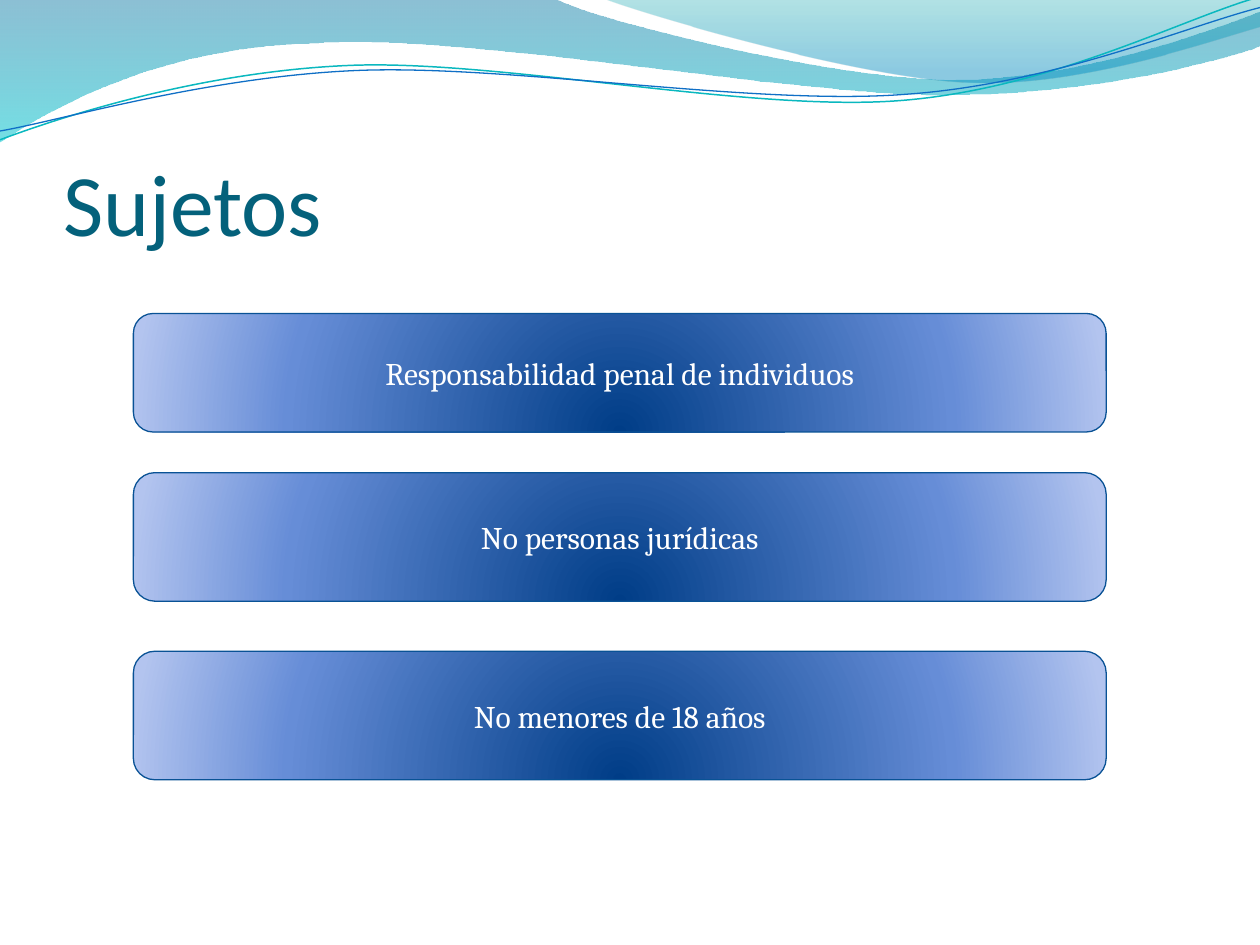
"""Build the "Sujetos" slide: wave header, title and three gradient cards."""
from dataclasses import dataclass
from typing import Optional

from lxml import etree
from pptx import Presentation
from pptx import util as u
from pptx.dml.color import RGBColor
from pptx.enum import shapes, text
from pptx.oxml.ns import qn

WHITE = RGBColor(0xFF, 0xFF, 0xFF)
TITLE = RGBColor(0x04, 0x61, 0x7B)
BORDER = RGBColor(0x09, 0x52, 0x95)
TEAL = RGBColor(0x0A, 0xB8, 0xBF)
BLUE = RGBColor(0x0F, 0x6F, 0xC6)
DEEP_BLUE = RGBColor(0x00, 0x74, 0xA1)
AQUA = RGBColor(0x00, 0xC6, 0xCF)
SEA = RGBColor(0x00, 0xA1, 0xA9)
SKY = RGBColor(0x00, 0x8B, 0xBF)
NAVY = RGBColor(0x00, 0x3D, 0x87)
MID_BLUE = RGBColor(0x66, 0x8D, 0xD7)
PALE_BLUE = RGBColor(0xB3, 0xC4, 0xEF)

UNIT = 2.54
CARD_LEFT, CARD_WIDTH = u.Cm(2.69), u.Cm(19.61)
CARD_STOPS = ((0, NAVY, 100), (68, MID_BLUE, 100), (100, PALE_BLUE, 100))


@dataclass
class Wave:
    start: tuple
    segments: tuple
    stops: tuple = ()
    color: Optional[RGBColor] = None
    width: float = 0


@dataclass
class Card:
    label: str
    top: float
    height: float


WAVES = (
    Wave((0, 0), (
        ((4.4, -0.01),),
        ((4.76, 0.17), (6.64, 0.63), (7.58, 0.63)),
        ((8.53, 0.63), (9.58, 0.26), (10, 0.09)),
        ((10.01, 0.36),),
        ((9.83, 0.44), (8.7, 0.76), (7.46, 0.75)),
        ((6.22, 0.75), (3.82, 0.28), (2.57, 0.34)),
        ((1.29, 0.36), (0.46, 0.83), (-0.01, 1.13)),
        ((0, 0),),
    ), stops=((0, DEEP_BLUE, 45), (100, AQUA, 55))),
    Wave((4.79, -0.01), (
        ((5.09, 0.11), (6.82, 0.62), (7.69, 0.65)),
        ((8.56, 0.69), (9.61, 0.32), (10, 0.21)),
        ((10, 0),),
        ((4.79, -0.01),),
    ), stops=((0, SEA, 30), (80, SKY, 45))),
    Wave((0, 1.11), (
        ((0.48, 0.93), (1.58, 0.57), (2.77, 0.52)),
        ((3.95, 0.47), (5.93, 0.89), (7.13, 0.8)),
        ((8.33, 0.71), (9.38, 0.15), (9.98, -0.02)),
    ), color=TEAL, width=0.85),
    Wave((0, 1.04), (
        ((0.47, 0.96), (1.64, 0.61), (2.83, 0.56)),
        ((4.03, 0.51), (5.97, 0.84), (7.17, 0.75)),
        ((8.36, 0.67), (9.41, 0.21), (10, 0.06)),
    ), color=BLUE, width=0.75),
)
CARDS = (
    Card("Responsabilidad penal de individuos", 6.32, 2.39),
    Card("No personas jurídicas", 9.53, 2.59),
    Card("No menores de 18 años", 13.13, 2.59),
)


def set_attrs(target, values: dict) -> None:
    for name, value in values.items():
        setattr(target, name, value)


def set_gradient(sp, stops: tuple, radial: bool = False) -> None:
    sp.fill.solid()
    solid = sp.element.spPr.find(qn("a:solidFill"))
    grad = etree.Element(qn("a:gradFill"), rotWithShape="1")
    stop_list = etree.SubElement(grad, qn("a:gsLst"))
    for position, color, opacity in stops:
        stop = etree.SubElement(stop_list, qn("a:gs"), pos=str(position * 1000))
        clr = etree.SubElement(stop, qn("a:srgbClr"), val=str(color))
        if opacity < 100:
            etree.SubElement(clr, qn("a:alpha"), val=str(opacity * 1000))
    if radial:
        circle = etree.SubElement(grad, qn("a:path"), {"path": "circle"})
        etree.SubElement(circle, qn("a:fillToRect"),
                         l="50000", t="130000", r="50000", b="-30000")
    else:
        etree.SubElement(grad, qn("a:lin"), ang="5400000", scaled="0")
    solid.getparent().replace(solid, grad)


def to_emu(point: tuple) -> tuple:
    return tuple(int(u.Cm(value * UNIT)) for value in point)


def bend_segments(sp, segments: tuple) -> None:
    lines = iter(list(sp.element.iter(qn("a:lnTo"))))
    for segment in segments:
        group = [next(lines) for _ in segment]
        if len(group) == 3:
            curve = etree.Element(qn("a:cubicBezTo"))
            group[0].addprevious(curve)
            for line in group:
                curve.append(line[0])
                line.getparent().remove(line)


def add_wave(s, wave: Wave) -> None:
    builder = s.shapes.build_freeform(*to_emu(wave.start))
    points = [to_emu(point) for segment in wave.segments for point in segment]
    builder.add_line_segments(points, close=bool(wave.stops))
    sp = builder.convert_to_shape()
    bend_segments(sp, wave.segments)
    sp.shadow.inherit = False
    if wave.stops:
        set_gradient(sp, wave.stops)
        sp.line.fill.background()
    else:
        sp.fill.background()
        sp.line.color.rgb = wave.color
        sp.line.width = u.Pt(wave.width)


def write(tf, content: str, align, color: RGBColor, font: dict) -> None:
    p = tf.paragraphs[0]
    p.alignment = align
    r = p.add_run()
    r.text = content
    set_attrs(r.font, font)
    r.font.color.rgb = color


def add_title(s) -> None:
    sp = s.shapes.title
    set_attrs(sp, dict(left=u.Cm(1.27), top=u.Cm(1.94),
                       width=u.Cm(23.06), height=u.Cm(3.18)))
    tf = sp.text_frame
    set_attrs(tf, dict(margin_left=0, margin_right=0, margin_bottom=0,
                       margin_top=u.Cm(0.13), word_wrap=True,
                       auto_size=text.MSO_AUTO_SIZE.NONE,
                       vertical_anchor=text.MSO_ANCHOR.BOTTOM))
    write(tf, "Sujetos", text.PP_ALIGN.LEFT, TITLE,
          dict(name="Calibri", size=u.Pt(50)))
    sp.element.getparent().append(sp.element)


def add_card(s, card: Card) -> None:
    sp = s.shapes.add_shape(shapes.MSO_SHAPE.ROUNDED_RECTANGLE, CARD_LEFT,
                            u.Cm(card.top), CARD_WIDTH, u.Cm(card.height))
    sp.shadow.inherit = False
    set_gradient(sp, CARD_STOPS, radial=True)
    sp.line.color.rgb = BORDER
    sp.line.width = u.Pt(0.75)
    tf = sp.text_frame
    set_attrs(tf, dict(word_wrap=True, vertical_anchor=text.MSO_ANCHOR.MIDDLE))
    write(tf, card.label, text.PP_ALIGN.CENTER, WHITE,
          dict(name="Cambria", size=u.Pt(18)))


def main() -> None:
    prs = Presentation()
    set_attrs(prs, dict(slide_width=u.Cm(25.4), slide_height=u.Cm(19.05)))
    s = prs.slides.add_slide(prs.slide_layouts[5])
    for wave in WAVES:
        add_wave(s, wave)
    add_title(s)
    for card in CARDS:
        add_card(s, card)
    prs.save("out.pptx")


if __name__ == "__main__":
    main()
